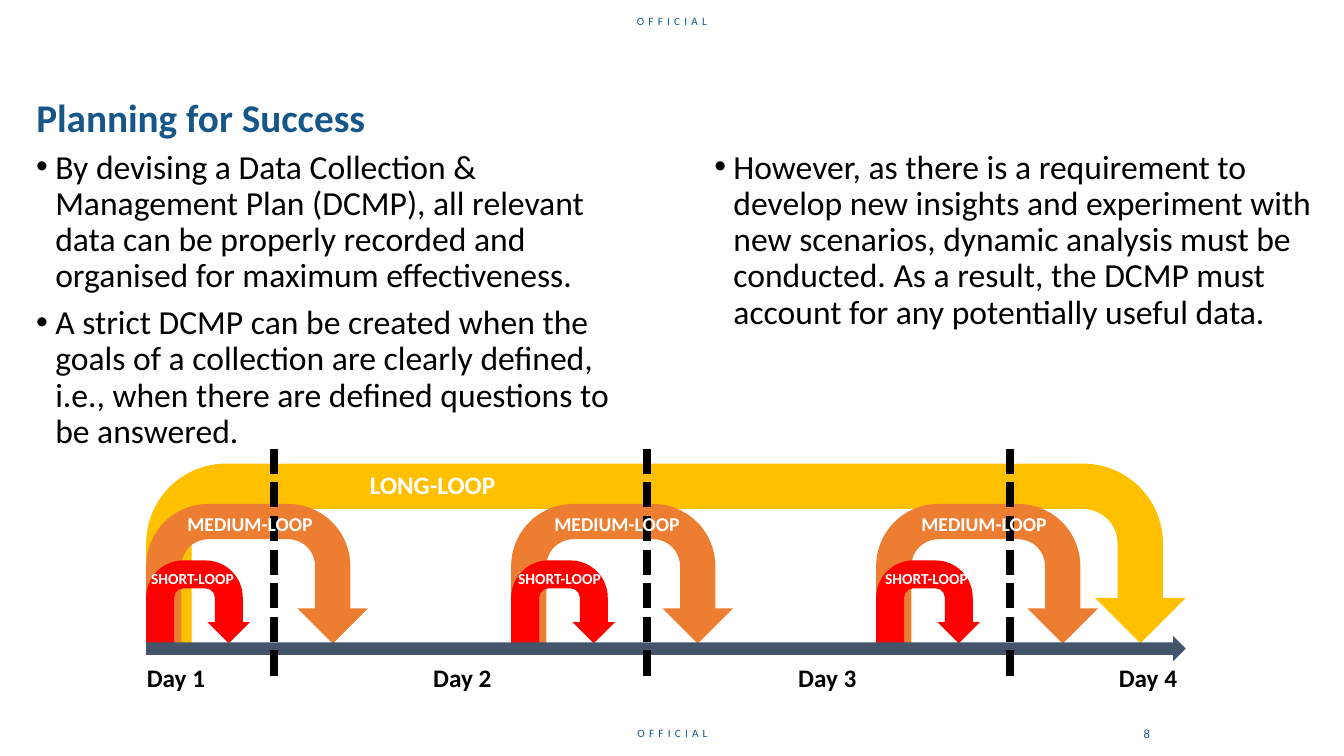
from lxml import etree
from pptx import Presentation, util as u
from pptx.dml.color import RGBColor
from pptx.enum import dml, shapes, text
from pptx.oxml.ns import qn

NAVY = RGBColor(0x16, 0x56, 0x89)
BLACK = RGBColor(0, 0, 0)
WHITE = RGBColor(255, 255, 255)
GOLD = RGBColor(0xFF, 0xC0, 0)
ORANGE = RGBColor(0xED, 0x7D, 0x31)
RED = RGBColor(255, 0, 0)
SLATE = RGBColor(0x44, 0x54, 0x6A)

WIDE, HIGH = 13.33, 7.5
POINTS = [
    "By devising a Data Collection & Management Plan (DCMP), all relevant data "
    "can be properly recorded and organised for maximum effectiveness.",
    "A strict DCMP can be created when the goals of a collection are clearly "
    "defined, i.e., when there are defined questions to be answered.",
    "However, as there is a requirement to develop new insights and experiment "
    "with new scenarios, dynamic analysis must be conducted. As a result, the "
    "DCMP must account for any potentially useful data.",
]


def inches(*sizes):
    return [u.Inches(size) for size in sizes]


def style(para, size, color, bold=False):
    font = para.font
    font.name, font.size, font.bold = "Calibri", u.Pt(size), bold
    font.color.rgb = color


def label(parent, box, words, size, color, bold=False):
    """Add one centred line of text and return its paragraph."""
    frame = parent.add_textbox(*inches(*box)).text_frame
    frame.word_wrap = True
    para = frame.paragraphs[0]
    para.text = words
    para.alignment = text.PP_ALIGN.CENTER
    style(para, size, color, bold)
    return para


def arrow(parent, kind, box, color, adjust=()):
    shape = parent.add_shape(kind, *inches(*box))
    shape.shadow.inherit = False
    shape.fill.solid()
    shape.fill.fore_color.rgb = color
    shape.line.fill.background()
    for i, value in enumerate(adjust):
        shape.adjustments[i] = value


def divider(parent, x, top, tall):
    line = parent.add_connector(
        shapes.MSO_CONNECTOR.STRAIGHT, *inches(x, top, x, top + tall))
    line.line.color.rgb = BLACK
    line.line.width = u.Pt(6)
    line.line.dash_style = dml.MSO_LINE.SQUARE_DOT
    etree.SubElement(line._element.spPr, qn("a:effectLst"))


def marks(slide):
    """Add the marking at top and bottom and the page number."""
    for box in [(0, 0.09, WIDE, 0.24), (4.03, 7.16, 5.28, 0.24)]:
        para = label(slide.shapes, box, "OFFICIAL", 8, NAVY)
        para.runs[0]._r.get_or_add_rPr().set("spc", "300")
    label(slide.shapes, (11.2, 7.15, 0.35, 0.25), "8", 9, NAVY)


def heading(slide, box):
    title = slide.shapes.title
    title.left, title.top, title.width, title.height = inches(*box)
    frame = title.text_frame
    frame.text = "Planning for Success"
    frame.vertical_anchor = text.MSO_ANCHOR.MIDDLE
    para = frame.paragraphs[0]
    para.alignment = text.PP_ALIGN.LEFT
    para.line_spacing = 0.9
    style(para, 28, NAVY, True)


def body(slide, box):
    """Add the bullets in two columns."""
    frame = slide.shapes.add_textbox(*inches(*box)).text_frame
    frame.word_wrap = True
    frame.auto_size = text.MSO_AUTO_SIZE.NONE
    frame.vertical_anchor = text.MSO_ANCHOR.MIDDLE
    props = frame._txBody.bodyPr
    props.set("numCol", "2")
    props.set("spcCol", str(u.Inches(0.79)))
    for i, words in enumerate(POINTS):
        para = frame.add_paragraph() if i else frame.paragraphs[0]
        para.text = words
        para.line_spacing = 0.9
        para.space_before = u.Pt(7.5 if i else 0)
        props = para._p.get_or_add_pPr()
        props.set("marL", str(u.Inches(0.19)))
        props.set("indent", str(-u.Inches(0.19)))
        etree.SubElement(props, qn("a:buFont"), typeface="Arial")
        etree.SubElement(props, qn("a:buChar"), char="•")
        style(para, 24, BLACK)


def timeline(slide, box):
    """Add the nested loops above the four-day axis."""
    left, top, wide, tall = box
    group = slide.shapes.add_group_shape().shapes
    turn = shapes.MSO_SHAPE.U_TURN_ARROW
    base = top + tall - 0.34
    step, pitch = 3.62, 3.64  # spacing of the loops and of their labels

    def loop(x, width, height, color, band, tip):
        arrow(group, turn, (x, base - height, width, height), color,
              (band, 0.25, 0.25, 0.44, tip))

    loop(left, wide, 1.8, GOLD, 0.25, 0.99)
    for width, height, color, band, tip in [
            (2.2, 1.4, ORANGE, 0.25, 0.99), (1.03, 0.84, RED, 0.33, 0.98)]:
        for i in range(3):
            loop(left + i * step, width, height, color, band, tip)
    arrow(group, shapes.MSO_SHAPE.RIGHT_ARROW,
          (left, base - 0.09, wide, 0.25), SLATE)

    for x in (1.27, 4.97, 8.57):
        divider(group, left + x, top, tall - 0.01)
    for day, x in enumerate((-0.45, 2.39, 6.01, 9.19), 1):
        label(group, (left + x, base + 0.12, 1.49, 0.4),
              f"Day {day}", 18, BLACK, True)

    label(group, (left + 1.8, top + 0.16, 2.08, 0.4),
          "LONG-LOOP", 18, WHITE, True)
    for i in range(3):
        x = left + i * pitch
        label(group, (x - 0.01, top + 0.58, 2.08, 0.34),
              "MEDIUM-LOOP", 14, WHITE, True)
        label(group, (x - 0.14, top + 1.15, 1.2, 0.29),
              "SHORT-LOOP", 11, WHITE, True)


def main():
    deck = Presentation()
    deck.slide_width, deck.slide_height = inches(WIDE, HIGH)
    slide = deck.slides.add_slide(deck.slide_layouts[5])
    marks(slide)
    heading(slide, (0.26, 0.95, 12.34, 0.48))
    body(slide, (0.26, 1.42, 12.86, 3.12))
    timeline(slide, (1.45, 4.45, 10.31, 2.29))
    deck.save("out.pptx")


if __name__ == "__main__":
    main()
